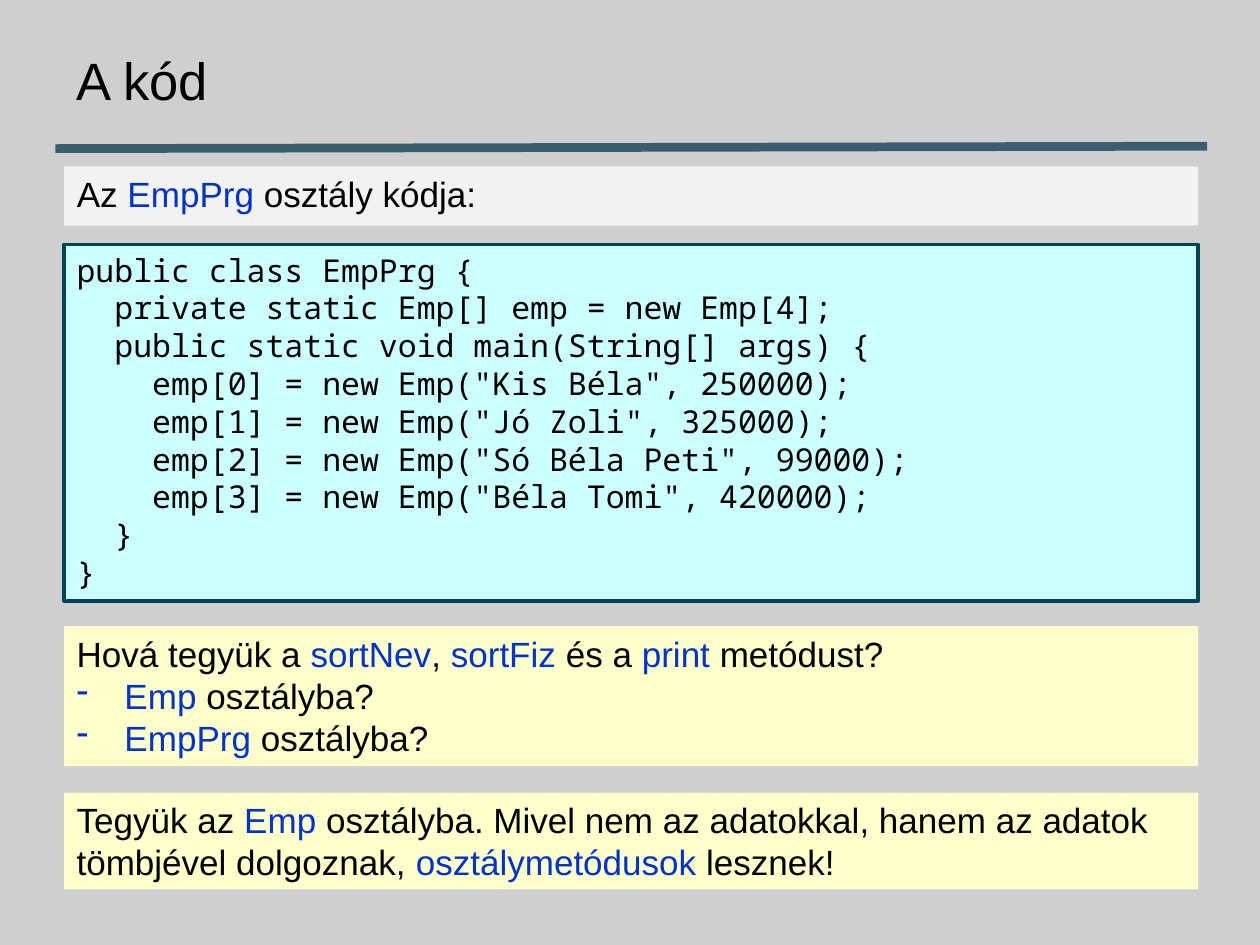
from lxml import etree
from pptx import Presentation
from pptx.dml.color import RGBColor
from pptx.enum.shapes import MSO_CONNECTOR
from pptx.enum.text import MSO_ANCHOR, MSO_AUTO_SIZE, PP_ALIGN
from pptx.oxml.ns import qn
from pptx.util import Inches, Pt

STRAIGHT = MSO_CONNECTOR.STRAIGHT
LEFT = PP_ALIGN.LEFT
TOP, MIDDLE = MSO_ANCHOR.TOP, MSO_ANCHOR.MIDDLE
NO_FIT = MSO_AUTO_SIZE.NONE

BLACK = RGBColor(0x00, 0x00, 0x00)
BLUE = RGBColor(0x00, 0x33, 0xCC)
GRAY = RGBColor(0xCF, 0xCF, 0xCF)
LIGHT_GRAY = RGBColor(0xF2, 0xF2, 0xF2)
CYAN = RGBColor(0xCC, 0xFF, 0xFF)
YELLOW = RGBColor(0xFF, 0xFF, 0xCC)
TEAL = RGBColor(0x00, 0x43, 0x58)
SLATE = RGBColor(0x3C, 0x5D, 0x6E)

CODE = """public class EmpPrg {
  private static Emp[] emp = new Emp[4];
  public static void main(String[] args) {
    emp[0] = new Emp("Kis Béla", 250000);
    emp[1] = new Emp("Jó Zoli", 325000);
    emp[2] = new Emp("Só Béla Peti", 99000);
    emp[3] = new Emp("Béla Tomi", 420000);
  }
}"""
QUESTION = """Hová tegyük a |sortNev|, |sortFiz| és a |print| metódust?
- |Emp| osztályba?
- |EmpPrg| osztályba?"""
ANSWER = ("Tegyük az |Emp| osztályba. Mivel nem az adatokkal, hanem az adatok "
          "tömbjével dolgoznak, |osztálymetódusok| lesznek!")

presentation = Presentation()
presentation.slide_width, presentation.slide_height = Inches(10), Inches(7.5)
slide = presentation.slides.add_slide(presentation.slide_layouts[1])
slide.background.fill.solid()
slide.background.fill.fore_color.rgb = GRAY

# Grid of 100 columns and 100 rows
column = presentation.slide_width / 100
row = presentation.slide_height / 100


def place(shape, top, height, fill=None):
    shape.left, shape.width = int(5.1 * column), int(90 * column)
    shape.top, shape.height = int(top * row), int(height * row)
    if fill is not None:
        shape.fill.solid()
        shape.fill.fore_color.rgb = fill


def write(shape, text, size, font="Arial", anchor=TOP):
    """Fill a shape line by line; |words| are blue, a leading "- " is a bullet."""
    frame = shape.text_frame
    frame.word_wrap, frame.auto_size, frame.vertical_anchor = True, NO_FIT, anchor
    for index, line in enumerate(text.split("\n")):
        paragraph = frame.add_paragraph() if index else frame.paragraphs[0]
        paragraph.alignment = LEFT
        paragraph.font.size, paragraph.font.name = Pt(size), font
        bulleted = line.startswith("- ")
        properties = paragraph._p.get_or_add_pPr()
        indent = Inches(0.38) if bulleted else 0
        properties.set("marL", str(indent))
        properties.set("indent", str(-indent))
        bullet = etree.Element(qn("a:buChar" if bulleted else "a:buNone"))
        if bulleted:
            bullet.set("char", "-")
        properties.insert_element_before(bullet, "a:tabLst", "a:defRPr", "a:extLst")
        for part, words in enumerate(line.removeprefix("- ").split("|")):
            if words:
                run = paragraph.add_run()
                run.text = words
                run.font.color.rgb = BLUE if part % 2 else BLACK


# Title and the rule below it
title = slide.shapes.title
place(title, 3.73, 9.47)
write(title, "A kód", 30, anchor=MIDDLE)

rule = slide.shapes.add_connector(
    STRAIGHT, int(4.4 * column), int(15.73 * row), int(95.8 * column), int(15.47 * row))
rule.line.color.rgb, rule.line.width = SLATE, Pt(5)
etree.SubElement(rule._element.spPr, qn("a:effectLst"))

# Introduction
body = slide.placeholders[1]
place(body, 17.6, 6.27, LIGHT_GRAY)
write(body, "Az |EmpPrg| osztály kódja:", 20)

# Code, question and answer boxes
for text, top, height, fill, size, font in (
    (CODE, 25.87, 37.73, CYAN, 18, "Noto Sans Mono"),
    (QUESTION, 66.27, 14.8, YELLOW, 20, "Arial"),
    (ANSWER, 83.87, 10.27, YELLOW, 20, "Arial"),
):
    box = slide.shapes.add_textbox(0, 0, 0, 0)
    place(box, top, height, fill)
    write(box, text, size, font)
    if text == CODE:
        box.line.color.rgb, box.line.width = TEAL, Pt(2)

presentation.save("out.pptx")
